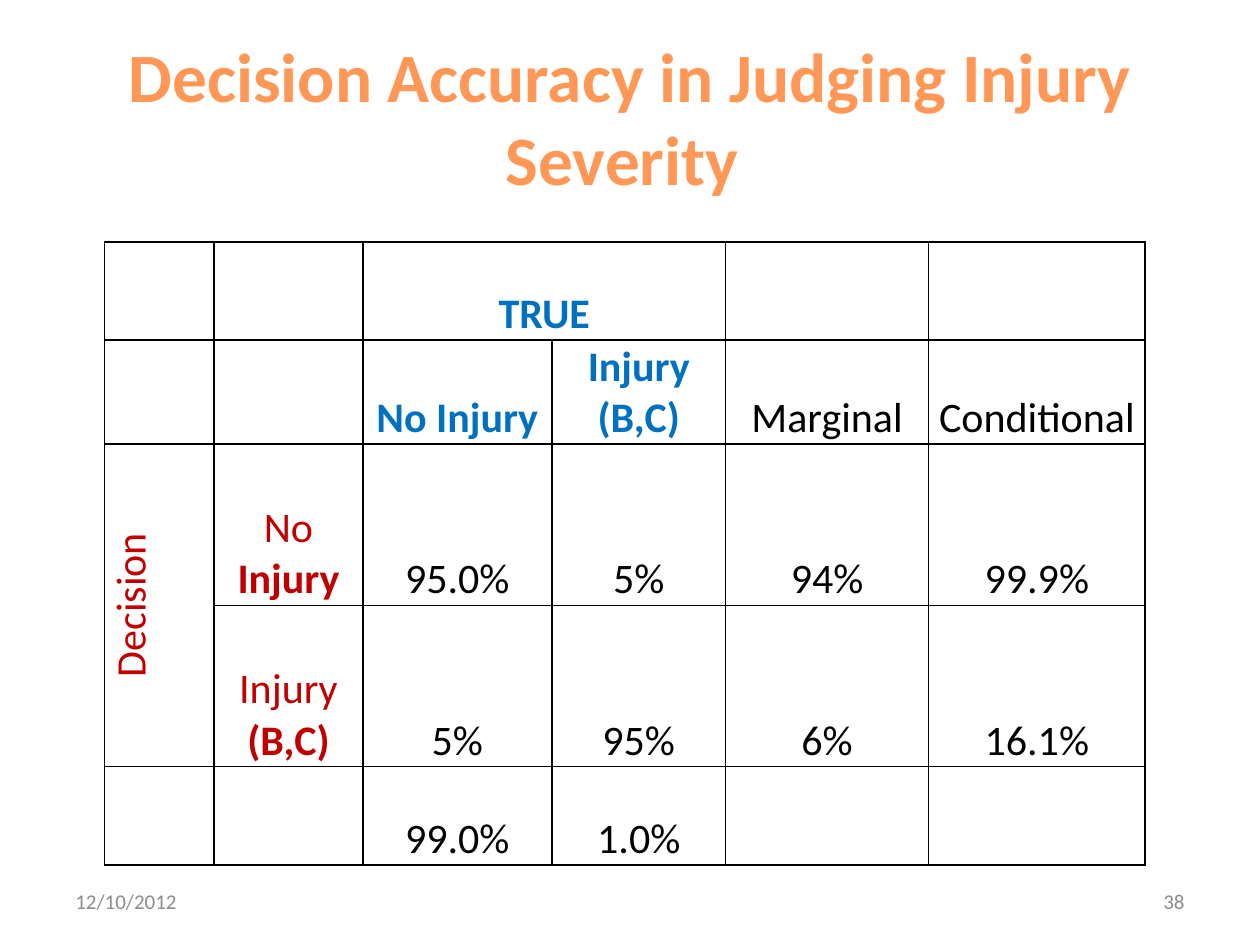
from dataclasses import dataclass

from lxml.etree import SubElement
from pptx import Presentation
from pptx.dml.color import RGBColor as Color
from pptx.enum.text import MSO_ANCHOR as Anchor, PP_ALIGN as Align
from pptx.oxml.ns import qn
from pptx.util import Inches, Pt


@dataclass(frozen=True)
class Theme:
    font: str = "Calibri"
    title: str = "FF9856"
    truth: str = "0070C0"
    decision: str = "C00000"
    text: str = "000000"
    footer: str = "8C8C8C"
    background: str = "FFFFFF"
    title_size: float = 39.6
    table_size: float = 24
    footer_size: float = 12
    border_width: float = 1


COLUMN_WIDTHS = [0.87, 1.18, 1.5, 1.38, 1.61, 1.72]
ROW_HEIGHTS = [0.78, 0.78, 1.28, 1.28, 0.78]
ROWS = [
    ["", "", "TRUE", "", "", ""],
    ["", "", "No Injury", "Injury (B,C)", "Marginal", "Conditional"],
    ["Decision", "No\nInjury", "95.0%", "5%", "94%", "99.9%"],
    ["", "Injury\n(B,C)", "5%", "95%", "6%", "16.1%"],
    ["", "", "99.0%", "1.0%", "", ""],
]
MERGES = [((0, 2), (0, 3)), ((2, 0), (3, 0))]


class SlideBuilder:
    def __init__(self, slide, theme):
        self.slide = slide
        self.theme = theme

    def style(self, paragraph, size, color, align, bold=False):
        paragraph.alignment = align
        font = paragraph.font
        font.name = self.theme.font
        font.size = Pt(size)
        font.bold = bold
        font.color.rgb = Color.from_string(color)

    def title(self, text, left, top, width, height):
        shape = self.slide.shapes.title
        shape.left, shape.top = Inches(left), Inches(top)
        shape.width, shape.height = Inches(width), Inches(height)
        frame = shape.text_frame
        frame.text = text
        frame.word_wrap = True
        frame.vertical_anchor = Anchor.MIDDLE
        self.style(frame.paragraphs[0], self.theme.title_size,
                   self.theme.title, Align.CENTER, True)

    def footer(self, text, left, align):
        shape = self.slide.shapes.add_textbox(
            Inches(left), Inches(6.95), Inches(2.33), Inches(0.4))
        frame = shape.text_frame
        frame.text = text
        frame.word_wrap = True
        frame.vertical_anchor = Anchor.MIDDLE
        self.style(frame.paragraphs[0], self.theme.footer_size,
                   self.theme.footer, align)

    def borders(self, cell):
        properties = cell._tc.get_or_add_tcPr()
        for side in ("lnL", "lnR", "lnT", "lnB"):
            line = SubElement(properties, qn(f"a:{side}"),
                              w=str(Pt(self.theme.border_width)))
            fill = SubElement(line, qn("a:solidFill"))
            SubElement(fill, qn("a:srgbClr"), val=self.theme.text)

    def cell(self, cell, text, color, bold):
        self.borders(cell)
        cell.fill.solid()
        cell.fill.fore_color.rgb = Color.from_string(self.theme.background)
        cell.margin_left = cell.margin_right = cell.margin_top = Inches(0.01)
        cell.margin_bottom = 0
        cell.vertical_anchor = Anchor.BOTTOM
        cell.text = text
        for index, paragraph in enumerate(cell.text_frame.paragraphs):
            self.style(paragraph, self.theme.table_size, color,
                       Align.CENTER, bold or index > 0)

    def table(self, rows, column_widths, row_heights, left, top):
        table = self.slide.shapes.add_table(
            len(rows), len(column_widths), Inches(left), Inches(top),
            Inches(sum(column_widths)), Inches(sum(row_heights))).table
        table.first_row = table.horz_banding = False
        for column, width in zip(table.columns, column_widths):
            column.width = Inches(width)
        for row, height in zip(table.rows, row_heights):
            row.height = Inches(height)
        for row_index, row in enumerate(rows):
            for column_index, text in enumerate(row):
                is_truth = row_index < 2 and column_index in (2, 3)
                color = self.theme.text
                if is_truth:
                    color = self.theme.truth
                elif column_index < 2:
                    color = self.theme.decision
                self.cell(table.cell(row_index, column_index), text,
                          color, is_truth)
        return table


def main():
    presentation = Presentation()
    presentation.slide_width = Inches(10)
    presentation.slide_height = Inches(7.5)
    slide = presentation.slides.add_slide(presentation.slide_layouts[5])
    builder = SlideBuilder(slide, Theme())

    builder.title("Decision Accuracy in Judging Injury Severity ",
                  0.5, 0.3, 9, 1.25)
    table = builder.table(ROWS, COLUMN_WIDTHS, ROW_HEIGHTS, 0.83, 1.92)
    for first, last in MERGES:
        table.cell(*first).merge(table.cell(*last))
    table.cell(2, 0)._tc.get_or_add_tcPr().set("vert", "vert270")
    builder.footer("12/10/2012", 0.5, Align.LEFT)
    builder.footer("38", 7.17, Align.RIGHT)

    presentation.save("out.pptx")


if __name__ == "__main__":
    main()
